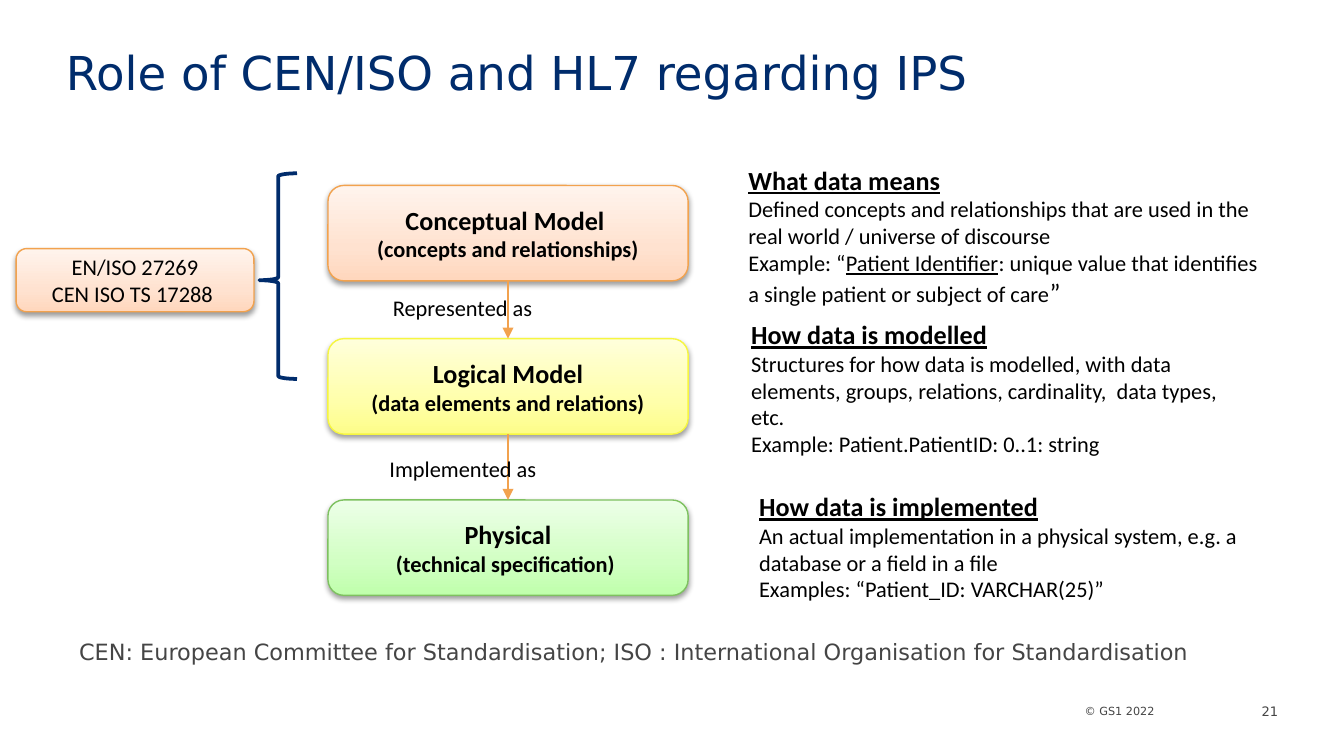
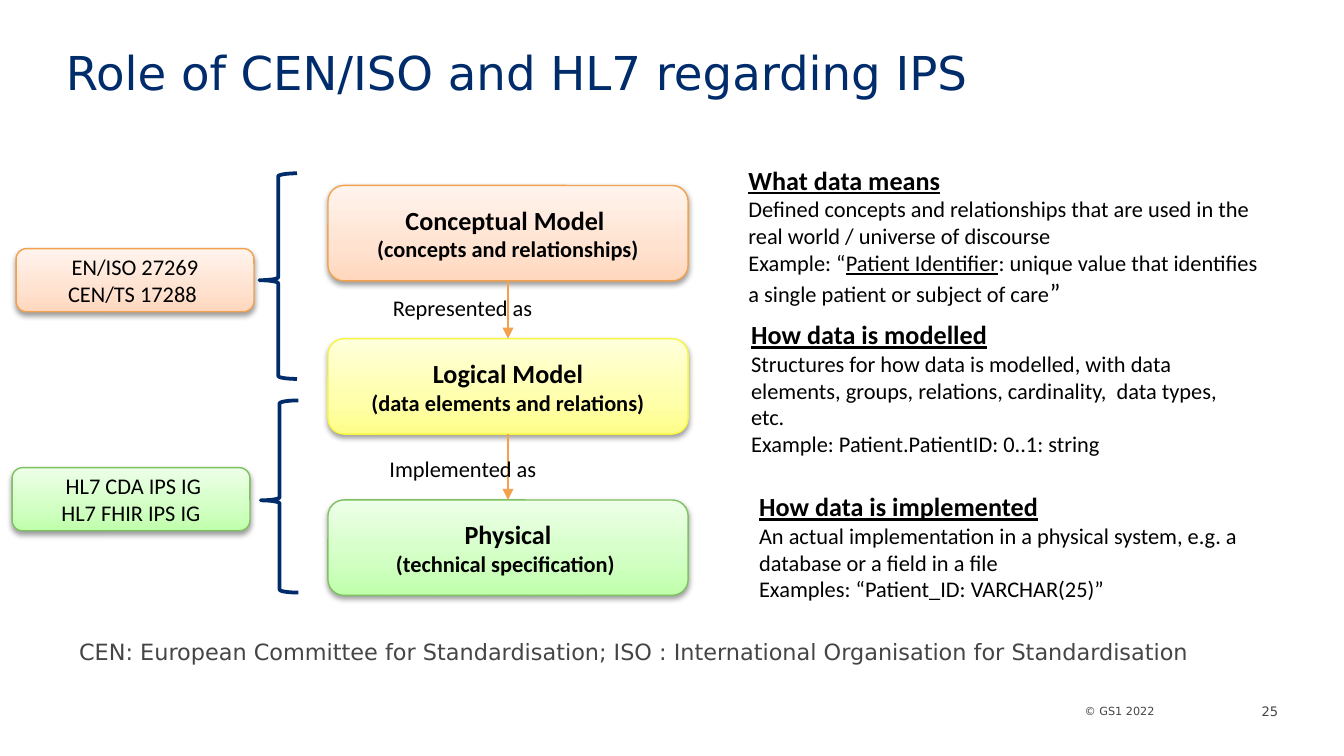
from copy import deepcopy
from dataclasses import dataclass

from lxml.etree import SubElement
from pptx import Presentation
from pptx.dml.color import RGBColor as Color
from pptx.enum.shapes import MSO_CONNECTOR as Connector, MSO_SHAPE as Shape
from pptx.enum.text import MSO_ANCHOR as Anchor, MSO_AUTO_SIZE as AutoSize, PP_ALIGN as Align
from pptx.oxml.ns import qn
from pptx.util import Inches, Pt

COLUMNS, ROWS = 100, 56.25


@dataclass(frozen=True)
class Theme:
    """Colours, fonts and type sizes of the presentation."""

    navy: str = "002C6C"
    grey: str = "454545"
    black: str = "000000"
    arrow: str = "F2A24E"
    orange: tuple = ("F2A24E", "FFD7BD", "FFE2D0", "FFF4ED")
    yellow: tuple = ("F6F640", "FDFD89", "FFFFAB", "FFFFDB")
    green: tuple = ("7EC160", "BFFFAB", "D1FFC3", "EDFFE8")
    stops: tuple = (0, 0.35, 1)
    brand_font: str = "DejaVu Sans"
    body_font: str = "Calibri"
    title: int = 25
    heading: int = 14
    body: int = 12
    number: int = 7
    footer: int = 6
    thin: float = 0.75
    thick: float = 2


THEME = Theme()
BRAND = dict(font=THEME.brand_font, color=THEME.grey)
HEADING = dict(size=THEME.heading, bold=True)
UNDERLINED = dict(HEADING, underline=True)

TITLE = "Role of CEN/ISO and HL7 regarding IPS"
COPYRIGHT = "© GS1 2022"
GLOSSARY = ("CEN: European Committee for Standardisation; "
            "ISO : International Organisation for Standardisation")

MODELS = [
    (13.8, THEME.orange, "Conceptual Model ", "(concepts and relationships)"),
    (25.2, THEME.yellow, "Logical Model", "(data elements and relations)"),
    (37.2, THEME.green, "Physical", "(technical specification) "),
]
STEPS = [
    ((28.1, 21.4, 12.5, 3), "Represented as"),
    ((27.8, 33.4, 13.1, 3), "Implemented as"),
]
EXPLANATIONS = [
    ((54.7, 11.7, 40.1, 12.1), "What data means", [
        "Defined concepts and relationships that are used in the real world / universe of discourse",
        [("Example: “", {}), ("Patient Identifier", dict(underline=True)),
         (": unique value that identifies a single patient or subject of care", {}),
         ("”", dict(size=THEME.heading))]]),
    ((54.9, 23.2, 37.5, 11.4), "How data is modelled", [
        "Structures for how data is modelled, with data elements, groups, relations, "
        "cardinality,  data types, etc.",
        "Example: Patient.PatientID: 0..1: string"]),
    ((55.5, 36, 39.3, 9.4), "How data is implemented", [
        "An actual implementation in a physical system, e.g. a database or a field in a file",
        "Examples: “Patient_ID: VARCHAR(25)”"]),
]


def cen_group(specification):
    """Return the bracketed group of CEN and ISO standards."""
    return ((19.3, 12.9, 2.8, 15.3), (1.2, 18.5, 17.7, 4.7), THEME.orange,
            ["EN/ISO 27269", specification])


HL7_GROUP = ((19.4, 29.8, 2.8, 14.3), (0.9, 34.8, 17.7, 4.7), THEME.green,
             [" HL7 CDA IPS IG", "HL7 FHIR IPS IG"])
PAGES = [
    (21, [cen_group("CEN ISO TS 17288 ")]),
    (25, [cen_group("CEN/TS 17288 "), HL7_GROUP]),
]


def write(frame, paragraphs, align=Align.LEFT, spacing=None, **style):
    """Fill a text frame with paragraphs, each a string or a list of styled runs."""
    for index, content in enumerate(paragraphs):
        paragraph = frame.add_paragraph() if index else frame.paragraphs[0]
        paragraph.alignment = align
        if spacing:
            paragraph.line_spacing = spacing
        for text, extra in [(content, {})] if isinstance(content, str) else content:
            run_style = dict(font=THEME.body_font, size=THEME.body, color=THEME.black,
                             bold=False, underline=False) | style | extra
            run = paragraph.add_run()
            run.text = text
            run.font.name = run_style["font"]
            run.font.size = Pt(run_style["size"])
            run.font.bold = run_style["bold"]
            run.font.underline = run_style["underline"]
            run.font.color.rgb = Color.from_string(run_style["color"])


class Deck:
    """Holds the presentation, its grid and the current slide."""

    def __init__(self):
        """Start an empty widescreen presentation."""
        self.presentation = Presentation()
        self.presentation.slide_width = Inches(10)
        self.presentation.slide_height = Inches(10) * 9 // 16
        self.slide = None

    def place(self, left, top, width, height):
        """Turn grid columns and rows into slide lengths."""
        column = self.presentation.slide_width / COLUMNS
        row = self.presentation.slide_height / ROWS
        return [round(length) for length in
                (left * column, top * row, width * column, height * row)]

    def text(self, area, paragraphs, wrap=True, grow=False, anchor=Anchor.TOP,
             margins=(0.1, 0.05, 0.1, 0.05), **style):
        """Add a text box."""
        frame = self.slide.shapes.add_textbox(*self.place(*area)).text_frame
        frame.word_wrap = wrap
        frame.auto_size = AutoSize.SHAPE_TO_FIT_TEXT if grow else AutoSize.NONE
        frame.vertical_anchor = anchor
        (frame.margin_left, frame.margin_top,
         frame.margin_right, frame.margin_bottom) = map(Inches, margins)
        write(frame, paragraphs, **style)

    def shape(self, kind, area, line, width):
        """Add a preset shape with an outline and no theme shadow."""
        shape = self.slide.shapes.add_shape(kind, *self.place(*area))
        shape.shadow.inherit = False
        shape.line.color.rgb = Color.from_string(line)
        shape.line.width = Pt(width)
        return shape

    def card(self, area, palette, paragraphs):
        """Add a rounded gradient card with a soft shadow."""
        line, *tints = palette
        card = self.shape(Shape.ROUNDED_RECTANGLE, area, line, THEME.thin)
        card.fill.gradient()
        card.fill.gradient_angle = 90
        properties = card.element.spPr
        stops = properties.find(".//" + qn("a:gsLst"))
        stops.append(deepcopy(stops[-1]))
        for stop, position, tint in zip(card.fill.gradient_stops, THEME.stops, tints):
            stop.position = position
            stop.color.rgb = Color.from_string(tint)
        shadow = SubElement(properties.find(qn("a:effectLst")), qn("a:outerShdw"),
                            blurRad=str(Pt(3.1)), dist=str(Pt(1.6)), dir="5400000",
                            rotWithShape="0")
        tone = SubElement(shadow, qn("a:srgbClr"), val=THEME.black)
        SubElement(tone, qn("a:alpha"), val="38000")
        card.text_frame.word_wrap = True
        card.text_frame.vertical_anchor = Anchor.MIDDLE
        write(card.text_frame, paragraphs, align=Align.CENTER)
        return card

    def brace(self, area):
        """Add a left brace."""
        brace = self.shape(Shape.LEFT_BRACE, area, THEME.navy, THEME.thick)
        brace.fill.background()
        brace.adjustments[0], brace.adjustments[1] = 0.08, 0.52

    def arrow(self, upper, lower):
        """Join two stacked cards with an arrow."""
        arrow = self.slide.shapes.add_connector(Connector.STRAIGHT, 0, 0, 0, 0)
        arrow.begin_connect(upper, 2)
        arrow.end_connect(lower, 0)
        arrow.line.color.rgb = Color.from_string(THEME.arrow)
        arrow.line.width = Pt(THEME.thin)
        properties = arrow.element.spPr
        SubElement(properties.find(qn("a:ln")), qn("a:tailEnd"), type="triangle")
        SubElement(properties, qn("a:effectLst"))

    def page(self, number):
        """Start a slide with its title, copyright line and number."""
        self.slide = self.presentation.slides.add_slide(self.presentation.slide_layouts[6])
        flush = dict(margins=(0, 0, 0, 0), align=Align.RIGHT, **BRAND)
        self.text((55.6, 52.4, 30.3, 1.1), [COPYRIGHT], size=THEME.footer, **flush)
        self.text((4.9, 1.9, 90.2, 7.4), [TITLE], anchor=Anchor.MIDDLE, spacing=0.9,
                  margins=(0, 0.05, 0.1, 0.05), size=THEME.title,
                  font=THEME.brand_font, color=THEME.navy)
        self.text((92.4, 52.1, 2.7, 1.6), [str(number)], anchor=Anchor.MIDDLE,
                  size=THEME.number, **flush)

    def models(self):
        """Add the three model levels, their arrows and explanations."""
        cards = [self.card((24.4, top, 26.8, 7.1), palette,
                           [[(name, HEADING)], [(detail, dict(bold=True))]])
                 for top, palette, name, detail in MODELS]
        for area, heading, lines in EXPLANATIONS:
            self.text(area, [[(heading, UNDERLINED)], *lines], grow=True)
        for upper, lower, (area, label) in zip(cards, cards[1:], STEPS):
            self.arrow(upper, lower)
            self.text(area, [label], wrap=False, grow=True, align=Align.RIGHT)


def main():
    """Build and save the presentation."""
    deck = Deck()
    for number, groups in PAGES:
        deck.page(number)
        deck.models()
        for brace_area, card_area, palette, standards in groups:
            deck.brace(brace_area)
            deck.card(card_area, palette, standards)
        deck.text((4.9, 47, 87.2, 3), [GLOSSARY], wrap=False, grow=True, **BRAND)
    deck.presentation.save("out.pptx")


if __name__ == "__main__":
    main()
